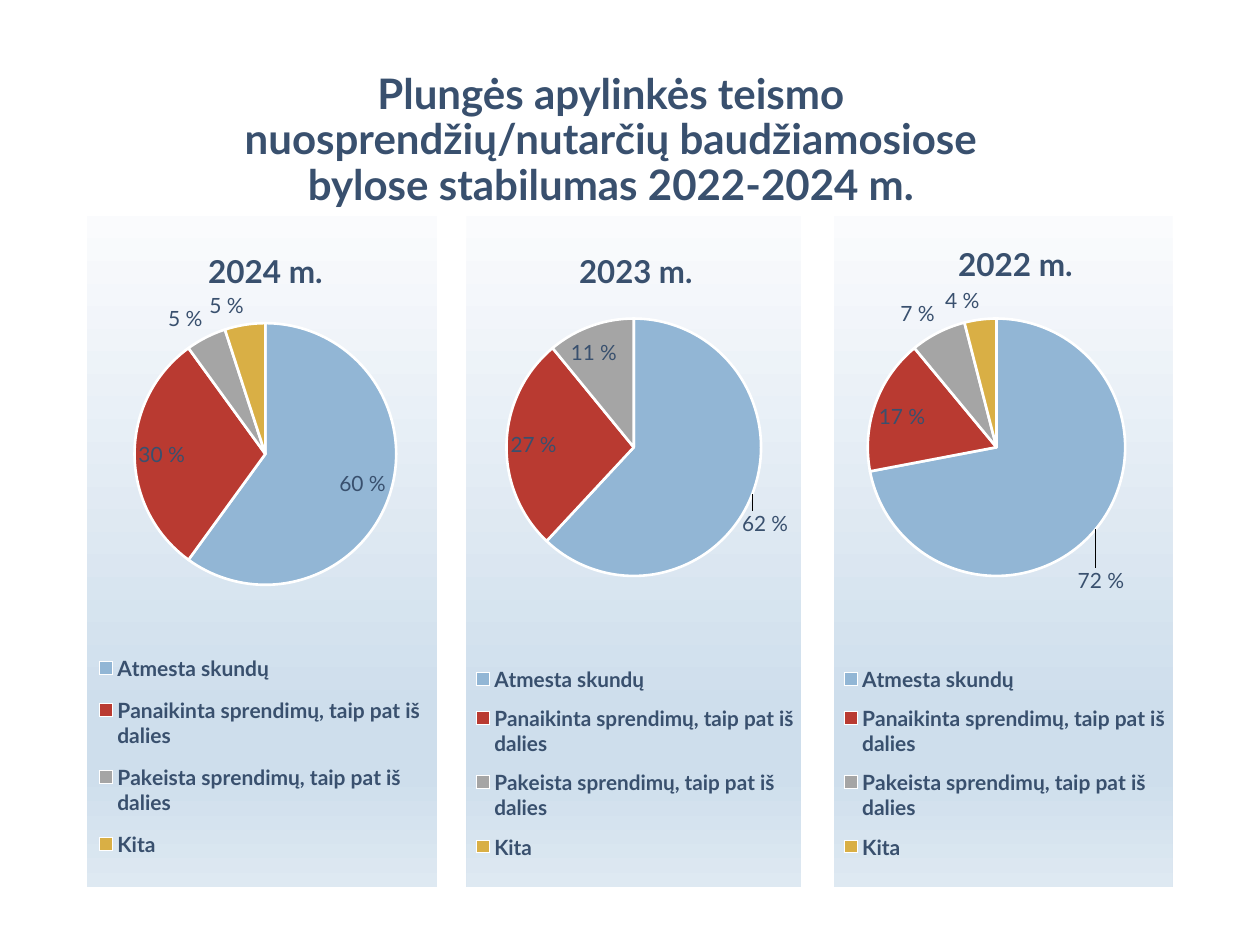
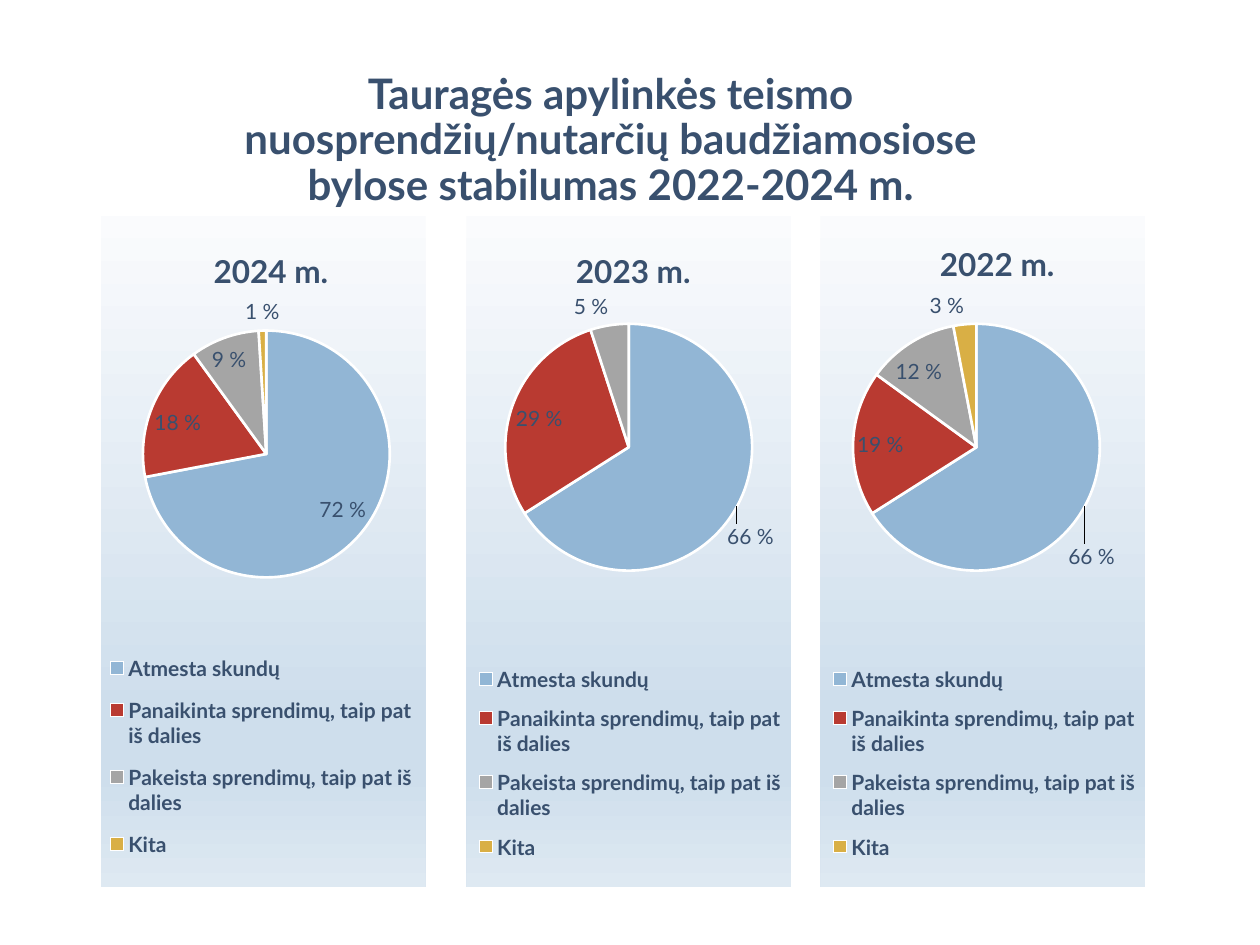
from lxml.etree import SubElement
from pptx import Presentation
from pptx.chart.data import CategoryChartData
from pptx.dml.color import RGBColor
from pptx.enum.chart import XL_CHART_TYPE, XL_LABEL_POSITION as LabelPos, XL_LEGEND_POSITION as LegendPos
from pptx.enum.text import MSO_ANCHOR, MSO_AUTO_SIZE, PP_ALIGN
from pptx.oxml import parse_xml
from pptx.oxml.ns import nsdecls, qn
from pptx.util import Cm, Pt

FONT = "Lato"
COLORS = {
    "text": "39506E",
    "white": "FFFFFF",
    "dismissed": "92B6D5",
    "annulled": "B93A31",
    "changed": "A5A5A5",
    "other": "D9AF45",
}
SLICES = ["dismissed", "annulled", "changed", "other"]
GRADIENT = [(0, "FAFBFD"), (74, "CEDEEC"), (83, "CEDEEC"), (100, "DEE9F2")]
CATEGORIES = [
    "Atmesta skundų",
    "Panaikinta sprendimų, taip pat iš dalies",
    "Pakeista sprendimų, taip pat iš dalies",
    "Kita",
]
NUMBER_FORMAT = '0" %";;'
CHART_TOP, CHART_HEIGHT = 4.35, 13.53

YEARS = {
    "2024 m.": {
        "title": (0.33, 0.04),
        "plot": (0.13, 0.16, 0.76, 0.39),
        "legend": (0.01, 0.63, 0.97, 0.35),
        "shift": None,
    },
    "2023 m.": {
        "title": (0.32, 0.04),
        "plot": (0.12, 0.15, 0.76, 0.39),
        "legend": (0.02, 0.65, 0.97, 0.33),
        "shift": (-0.05, 0.02),
    },
    "2022 m.": {
        "title": (0.35, 0.03),
        "plot": (0.1, 0.15, 0.76, 0.39),
        "legend": (0.02, 0.65, 0.97, 0.33),
        "shift": (-0.07, 0.05),
    },
}

COURTS = [
    {
        "name": "Plungės",
        "title": (4.01, 16.61),
        "charts": [(1.75, 7.06), (9.4, 6.83), (16.81, 6.83)],
        "values": [(60, 30, 5, 5), (62, 27, 11, 0), (72, 17, 7, 4)],
    },
    {
        "name": "Tauragės",
        "title": (3.56, 17.5),
        "charts": [(2.03, 6.55), (9.4, 6.55), (16.54, 6.55)],
        "values": [(72, 18, 9, 1), (66, 29, 5, 0), (66, 19, 12, 3)],
    },
]


def rgb(name):
    """Return the named colour."""
    return RGBColor.from_string(COLORS[name])


def make_layout(position, edge=True, inner=False):
    """Return a manual chart layout from x, y and optional width, height."""
    layout = parse_xml(f"<c:layout {nsdecls('c')}/>")
    manual = SubElement(layout, qn("c:manualLayout"))
    settings = [("layoutTarget", "inner")] if inner else []
    if edge:
        settings += [("xMode", "edge"), ("yMode", "edge")]
    settings += zip("xywh", position)
    for tag, value in settings:
        SubElement(manual, qn(f"c:{tag}")).set("val", str(value))
    return layout


class Deck:
    """Hold the shared style and the current slide."""

    def __init__(self):
        """Open an empty presentation."""
        self.prs = Presentation()
        self.prs.slide_width, self.prs.slide_height = Cm(25.4), Cm(19.05)
        self.s = None

    def new_slide(self):
        """Start a slide that has only a title."""
        self.s = self.prs.slides.add_slide(self.prs.slide_layouts[5])

    def style(self, font, size, bold=True):
        """Apply the shared font."""
        font.name, font.size, font.bold = FONT, Pt(size), bold
        font.color.rgb = rgb("text")

    def title(self, text, left, width):
        """Place and format the slide title."""
        sp = self.s.shapes.title
        sp.left, sp.top, sp.width, sp.height = Cm(left), Cm(0.99), Cm(width), Cm(3.71)
        tf = sp.text_frame
        tf.text = text
        tf.word_wrap, tf.auto_size = True, MSO_AUTO_SIZE.NONE
        tf.vertical_anchor = MSO_ANCHOR.MIDDLE
        p = tf.paragraphs[0]
        p.alignment, p.line_spacing = PP_ALIGN.CENTER, 0.9
        self.style(p.runs[0].font, 24)

    def pie(self, year, values, left, width):
        """Add one year's pie chart."""
        data = CategoryChartData()
        data.categories = CATEGORIES
        data.add_series(year, values)
        chart = self.s.shapes.add_chart(
            XL_CHART_TYPE.PIE, Cm(left), Cm(CHART_TOP), Cm(width), Cm(CHART_HEIGHT), data
        ).chart
        places = YEARS[year]
        self.style(chart.font, 10)
        self.background(chart)
        self.chart_title(chart, year, places["title"])
        self.legend(chart, places["legend"])
        self.slices(chart.plots[0], places["shift"])
        area = chart.element.find(".//" + qn("c:plotArea"))
        for old in area.findall(qn("c:layout")):
            area.remove(old)
        area.insert(0, make_layout(places["plot"], inner=True))

    def background(self, chart):
        """Fill the chart area with the vertical gradient."""
        stops = "".join(
            f'<a:gs pos="{pos * 1000}"><a:srgbClr val="{color}"/></a:gs>' for pos, color in GRADIENT
        )
        chart.element.find(qn("c:chart")).addnext(parse_xml(
            f"<c:spPr {nsdecls('c', 'a')}><a:gradFill><a:gsLst>{stops}</a:gsLst>"
            '<a:lin ang="5400000" scaled="0"/></a:gradFill><a:ln><a:noFill/></a:ln></c:spPr>'
        ))

    def chart_title(self, chart, text, position):
        """Write the year above the pie."""
        title = chart.chart_title
        title.text_frame.text = text
        self.style(title.text_frame.paragraphs[0].runs[0].font, 18)
        element = chart.element.find(".//" + qn("c:title"))
        for old in element.findall(qn("c:layout")):
            element.remove(old)
        element.find(qn("c:tx")).addnext(make_layout(position))

    def legend(self, chart, position):
        """Show the legend below the pie."""
        chart.has_legend = True
        legend = chart.legend
        legend.position, legend.include_in_layout = LegendPos.BOTTOM, False
        self.style(legend.font, 12)
        element = chart.element.find(".//" + qn("c:legend"))
        for old in element.findall(qn("c:layout")):
            element.remove(old)
        element.find(qn("c:legendPos")).addnext(make_layout(position))

    def slices(self, plot, shift):
        """Colour and label the slices, shifting the first label if asked."""
        plot.vary_by_categories = True
        series = plot.series[0]
        for i, name in enumerate(SLICES):
            fmt = series.points[i].format
            fmt.fill.solid()
            fmt.fill.fore_color.rgb = rgb(name)
            fmt.line.color.rgb, fmt.line.width = rgb("white"), Pt(1.5)
        labels = series.data_labels
        labels.show_value = True
        labels.number_format, labels.number_format_is_linked = NUMBER_FORMAT, False
        labels.position = LabelPos.BEST_FIT
        self.style(labels.font, 12, bold=False)
        if shift:
            label = series.points[0].data_label
            self.style(label.font, 12, bold=False)
            label.position = LabelPos.BEST_FIT
            layout = make_layout(shift, edge=False)
            plot.series[0].points[0].data_label
            idx = series.data_labels._element.find(qn("c:dLbl")).find(qn("c:idx"))
            idx.addnext(layout)
            fmt = parse_xml(f"<c:numFmt {nsdecls('c')} sourceLinked=\"0\"/>")
            fmt.set("formatCode", NUMBER_FORMAT)
            layout.addnext(fmt)


def main():
    """Build one slide for each court."""
    deck = Deck()
    for court in COURTS:
        deck.new_slide()
        deck.title(
            f"{court['name']} apylinkės teismo nuosprendžių/nutarčių baudžiamosiose "
            "bylose stabilumas 2022-2024 m.",
            *court["title"],
        )
        for year, values, (left, width) in zip(YEARS, court["values"], court["charts"]):
            deck.pie(year, values, left, width)
    deck.prs.save("out.pptx")


if __name__ == "__main__":
    main()
